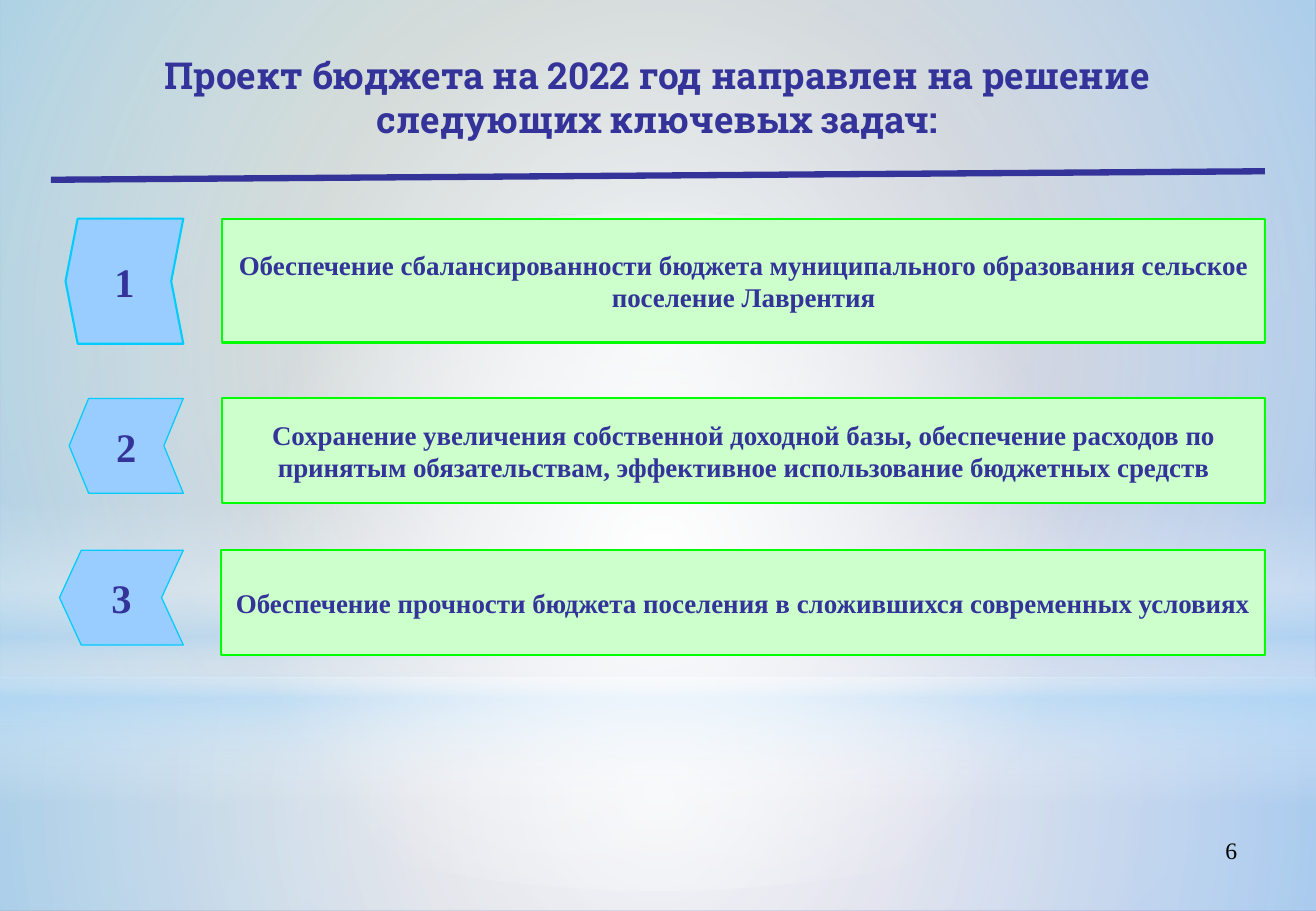
from lxml import etree
from pptx import Presentation
from pptx.dml.color import RGBColor
from pptx.enum.shapes import MSO_CONNECTOR, MSO_SHAPE
from pptx.enum.text import MSO_ANCHOR, PP_ALIGN
from pptx.oxml.ns import qn
from pptx.util import Pt

RECTANGLE, OVAL, CHEVRON = MSO_SHAPE.RECTANGLE, MSO_SHAPE.OVAL, MSO_SHAPE.CHEVRON
STRAIGHT = MSO_CONNECTOR.STRAIGHT
TOP, MIDDLE = MSO_ANCHOR.TOP, MSO_ANCHOR.MIDDLE
CENTER, RIGHT = PP_ALIGN.CENTER, PP_ALIGN.RIGHT

EMU_PER_PX = 9144
SLIDE_WIDTH, SLIDE_HEIGHT = 1084, 750
CONTENT_RIGHT = 1042
CHEVRON_RIGHT = 151

BLACK = RGBColor(0x00, 0x00, 0x00)
WHITE = RGBColor(0xFF, 0xFF, 0xFF)
SKY = RGBColor(0xB4, 0xDC, 0xFA)
SAGE = RGBColor(0x96, 0xAB, 0x94)
LAVENDER = RGBColor(0x84, 0x88, 0xC4)
INDIGO = RGBColor(0x33, 0x33, 0x99)
MINT = RGBColor(0xCC, 0xFF, 0xCC)
GREEN = RGBColor(0x00, 0xFF, 0x00)
LIGHT_BLUE = RGBColor(0x99, 0xCC, 0xFF)
CYAN = RGBColor(0x00, 0xCC, 0xFF)

TITLE_FORMAT = {"name": "Roboto Slab", "size": Pt(22), "bold": True}
TASK_FORMAT = {"name": "Times New Roman", "size": Pt(16), "bold": True}
NUMBER_FORMAT = {"name": "Times New Roman", "size": Pt(24), "bold": True}
PAGE_FORMAT = {"name": "Times New Roman", "size": Pt(14), "bold": False}

TITLE = "Проект бюджета на 2022 год направлен на решение следующих ключевых задач:"
TASKS = [
    {
        "text": "Обеспечение сбалансированности бюджета муниципального образования сельское поселение Лаврентия",
        "top": 180, "left": 183, "height": 102,
        "chevron_left": 54, "chevron_height": 103, "notch": 0.103, "outline": 1.25,
    },
    {
        "text": "Сохранение увеличения собственной доходной базы, обеспечение расходов по принятым обязательствам, эффективное использование бюджетных средств",
        "top": 328, "left": 183, "height": 86,
        "chevron_left": 57, "chevron_height": 78, "notch": 0.205, "outline": 0.75,
    },
    {
        "text": "Обеспечение прочности бюджета поселения в сложившихся современных условиях",
        "top": 453, "left": 182, "height": 86,
        "chevron_left": 49, "chevron_height": 78, "notch": 0.23, "outline": 0.75,
    },
]

GLOWS = [
    (RECTANGLE, (0, 558, SLIDE_WIDTH, 192),
     [(0, WHITE, 91), (37, WHITE, 76), (100, SKY, 79)], None),
    (RECTANGLE, (0, 0, SLIDE_WIDTH, 558),
     [(0, WHITE, 89), (48, WHITE, 62), (100, SKY, 79)], None),
    (RECTANGLE, (0, 412, SLIDE_WIDTH, 250),
     [(0, WHITE, 0), (29, WHITE, 30), (45, SKY, 40),
      (55, WHITE, 26), (65, SKY, 60), (100, WHITE, 0)], 90),
    (OVAL, (0, 175, SLIDE_WIDTH, 558), [(0, WHITE, 100), (56, WHITE, 0)], None),
]


def px(*lengths):
    return [length * EMU_PER_PX for length in lengths]


def paint_gradient(fill, owner, stops, angle):
    fill.gradient()
    gradient = next(owner.iter(qn("a:gradFill")))
    for child in list(gradient):
        gradient.remove(child)
    stop_list = etree.SubElement(gradient, qn("a:gsLst"))
    for position, color, opacity in stops:
        stop = etree.SubElement(stop_list, qn("a:gs"), pos=str(position * 1000))
        tint = etree.SubElement(stop, qn("a:srgbClr"), val=str(color))
        etree.SubElement(tint, qn("a:alpha"), val=str(opacity * 1000))
    if angle is None:
        radial = etree.SubElement(gradient, qn("a:path"), path="circle")
        etree.SubElement(radial, qn("a:fillToRect"), l="50000", t="50000", r="50000", b="50000")
    else:
        etree.SubElement(gradient, qn("a:lin"), ang=str(angle * 60000), scaled="0")


def add_glow(slide, kind, box, stops, angle):
    glow = slide.shapes.add_shape(kind, *px(*box))
    glow.shadow.inherit = False
    glow.line.fill.background()
    paint_gradient(glow.fill, glow._element, stops, angle)


def write(frame, text, font_format, color=INDIGO, align=CENTER, anchor=MIDDLE):
    frame.word_wrap = True
    frame.vertical_anchor = anchor
    paragraph = frame.paragraphs[0]
    paragraph.alignment = align
    run = paragraph.add_run()
    run.text = text
    for attribute, value in font_format.items():
        setattr(run.font, attribute, value)
    run.font.color.rgb = color


def add_label(slide, box, *text_settings):
    label = slide.shapes.add_textbox(*px(*box))
    write(label.text_frame, *text_settings)


def add_panel(slide, kind, box, fill_color, line_color, line_width, text, font_format):
    panel = slide.shapes.add_shape(kind, *px(*box))
    panel.shadow.inherit = False
    panel.fill.solid()
    panel.fill.fore_color.rgb = fill_color
    panel.line.color.rgb = line_color
    panel.line.width = Pt(line_width)
    write(panel.text_frame, text, font_format)
    return panel


def add_task(slide, number, task):
    top, left, chevron_left = task["top"], task["left"], task["chevron_left"]
    add_panel(slide, RECTANGLE, (left, top, CONTENT_RIGHT - left, task["height"]),
              MINT, GREEN, 1.25, task["text"], TASK_FORMAT)
    chevron = add_panel(
        slide, CHEVRON,
        (chevron_left, top, CHEVRON_RIGHT - chevron_left, task["chevron_height"]),
        LIGHT_BLUE, CYAN, task["outline"], str(number), NUMBER_FORMAT)
    chevron.adjustments[0] = task["notch"]
    chevron.rotation = 180
    chevron.text_frame._txBody.bodyPr.set("rot", str(180 * 60000))


def add_rule(slide, start, end):
    rule = slide.shapes.add_connector(STRAIGHT, *px(*start, *end))
    rule.line.color.rgb = INDIGO
    rule.line.width = Pt(3.75)
    etree.SubElement(rule._element.spPr, qn("a:effectLst"))


def main():
    deck = Presentation()
    deck.slide_width, deck.slide_height = px(SLIDE_WIDTH, SLIDE_HEIGHT)
    slide = deck.slides.add_slide(deck.slide_layouts[6])
    paint_gradient(slide.background.fill, slide._element,
                   [(0, SAGE, 100), (100, LAVENDER, 100)], 45)
    for glow in GLOWS:
        add_glow(slide, *glow)
    add_label(slide, (776, 683, 253, 52), "6", PAGE_FORMAT, BLACK, RIGHT, TOP)
    for number, task in enumerate(TASKS, 1):
        add_task(slide, number, task)
    add_label(slide, (54, 26, 975, 107), TITLE, TITLE_FORMAT)
    add_rule(slide, (42, 148), (CONTENT_RIGHT, 141))
    deck.save("out.pptx")


if __name__ == "__main__":
    main()
